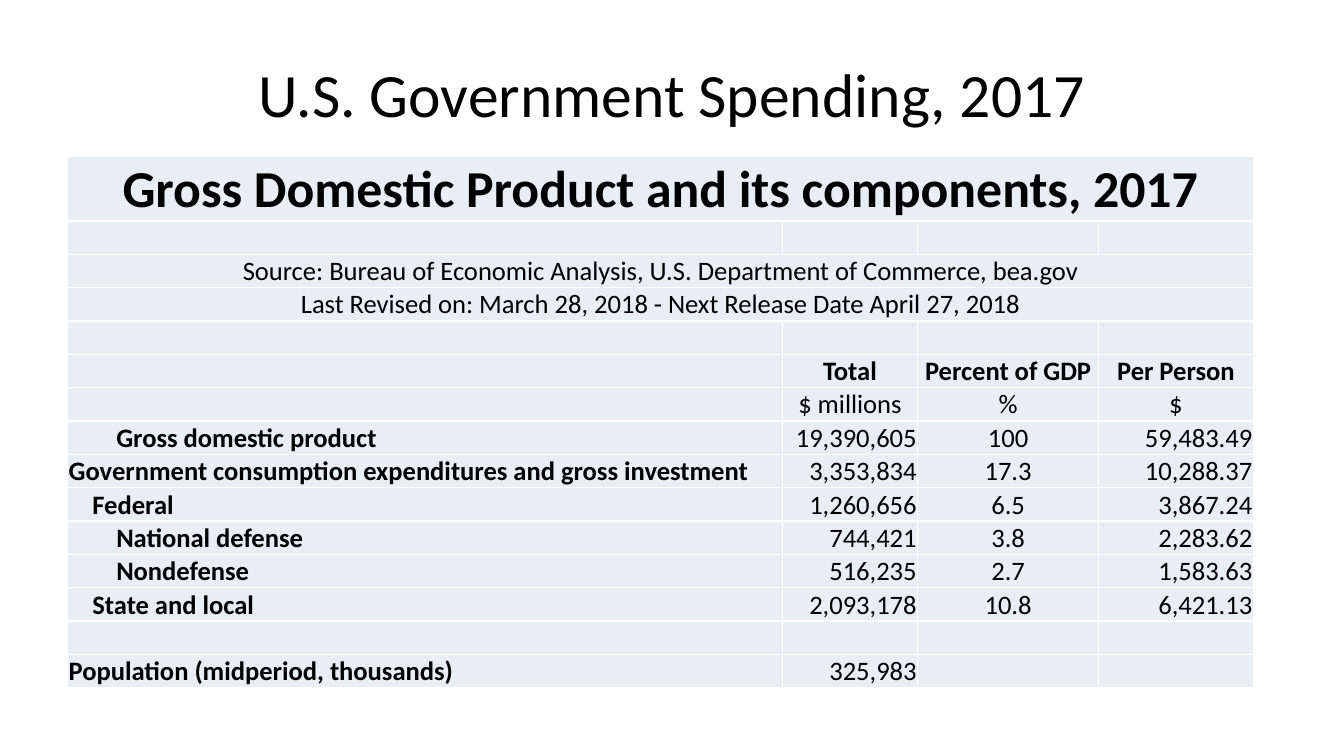
from lxml import etree
from pptx import Presentation
from pptx import util as u
from pptx.dml.color import RGBColor
from pptx.enum import text
from pptx.oxml import ns

LEFT, CENTER, RIGHT = text.PP_ALIGN.LEFT, text.PP_ALIGN.CENTER, text.PP_ALIGN.RIGHT


def add_run(p, words, size, bold=False, color="000000"):
    r = p.add_run()
    r.text = words
    r.font.name = "Calibri"
    r.font.size = u.Pt(size)
    r.font.bold = bold
    r.font.color.rgb = RGBColor.from_string(color)


def style_cell(cell, fill="E9EDF4", line="FFFFFF"):
    cell.margin_left = cell.margin_right = cell.margin_top = u.Cm(0.02)
    cell.margin_bottom = 0
    tcPr = cell._tc.get_or_add_tcPr()
    for side in ("lnL", "lnR", "lnT", "lnB"):
        ln = etree.SubElement(tcPr, ns.qn("a:" + side), w=str(u.Pt(1)))
        solid = etree.SubElement(ln, ns.qn("a:solidFill"))
        etree.SubElement(solid, ns.qn("a:srgbClr"), val=line)
    cell.fill.solid()
    cell.fill.fore_color.rgb = RGBColor.from_string(fill)


prs = Presentation()
prs.slide_width, prs.slide_height = u.Cm(33.87), u.Cm(19.05)
s = prs.slides.add_slide(prs.slide_layouts[5])

# Title
title = s.shapes.title
title.left, title.top = u.Cm(1.7), u.Cm(0.76)
title.width, title.height = u.Cm(30.48), u.Cm(3.18)
tf = title.text_frame
tf.vertical_anchor = text.MSO_ANCHOR.MIDDLE
tf.paragraphs[0].alignment = CENTER
add_run(tf.paragraphs[0], "U.S. Government Spending, 2017", 44)

# Table content: one-item rows span all columns, empty rows are spacers
rows = [
    ["Gross Domestic Product and its components, 2017"],
    [],
    ["Source: Bureau of Economic Analysis, U.S. Department of Commerce, bea.gov"],
    ["Last Revised on: March 28, 2018 - Next Release Date April 27, 2018"],
    [],
    ["", "Total", "Percent of GDP", "Per Person"],
    ["", "$ millions", "%", "$"],
    ["Gross domestic product", "19,390,605", "100", "59,483.49"],
    ["Government consumption expenditures and gross investment",
     "3,353,834", "17.3", "10,288.37"],
    ["Federal", "1,260,656", "6.5", "3,867.24"],
    ["National defense", "744,421", "3.8", "2,283.62"],
    ["Nondefense", "516,235", "2.7", "1,583.63"],
    ["State and local", "2,093,178", "10.8", "6,421.13"],
    [],
    ["Population (midperiod, thousands)", "325,983", "", ""],
]
indents = {"Gross domestic product": 2, "Federal": 1, "National defense": 2,
           "Nondefense": 2, "State and local": 1}
col_widths = [18.01, 3.4, 4.57, 3.89]
row_heights = [1.62] + [0.84] * (len(rows) - 1)
HEADER, UNITS = 5, 6

# Table grid
tbl = s.shapes.add_table(len(rows), len(col_widths), u.Cm(1.71), u.Cm(3.95),
                         u.Cm(sum(col_widths)), u.Cm(sum(row_heights))).table
tbl.first_row = tbl.horz_banding = False
for col, width in zip(tbl.columns, col_widths):
    col.width = u.Cm(width)
for row, height in zip(tbl.rows, row_heights):
    row.height = u.Cm(height)
for cell in tbl.iter_cells():
    style_cell(cell)

# Table text
for i, values in enumerate(rows):
    if len(values) == 1:
        tbl.cell(i, 0).merge(tbl.cell(i, len(col_widths) - 1))
    for j, value in enumerate(values):
        if not value:
            continue
        cell = tbl.cell(i, j)
        cell.vertical_anchor = text.MSO_ANCHOR.TOP if i == HEADER else text.MSO_ANCHOR.BOTTOM
        cell.margin_left = u.Cm(0.02 + 0.6 * indents.get(value, 0))
        p = cell.text_frame.paragraphs[0]
        p.alignment = CENTER if i <= UNITS else (LEFT, RIGHT, CENTER, RIGHT)[j]
        bold = i in (0, HEADER) or (i > UNITS and j == 0)
        add_run(p, value, 37 if i == 0 else 19, bold)

prs.save("out.pptx")
